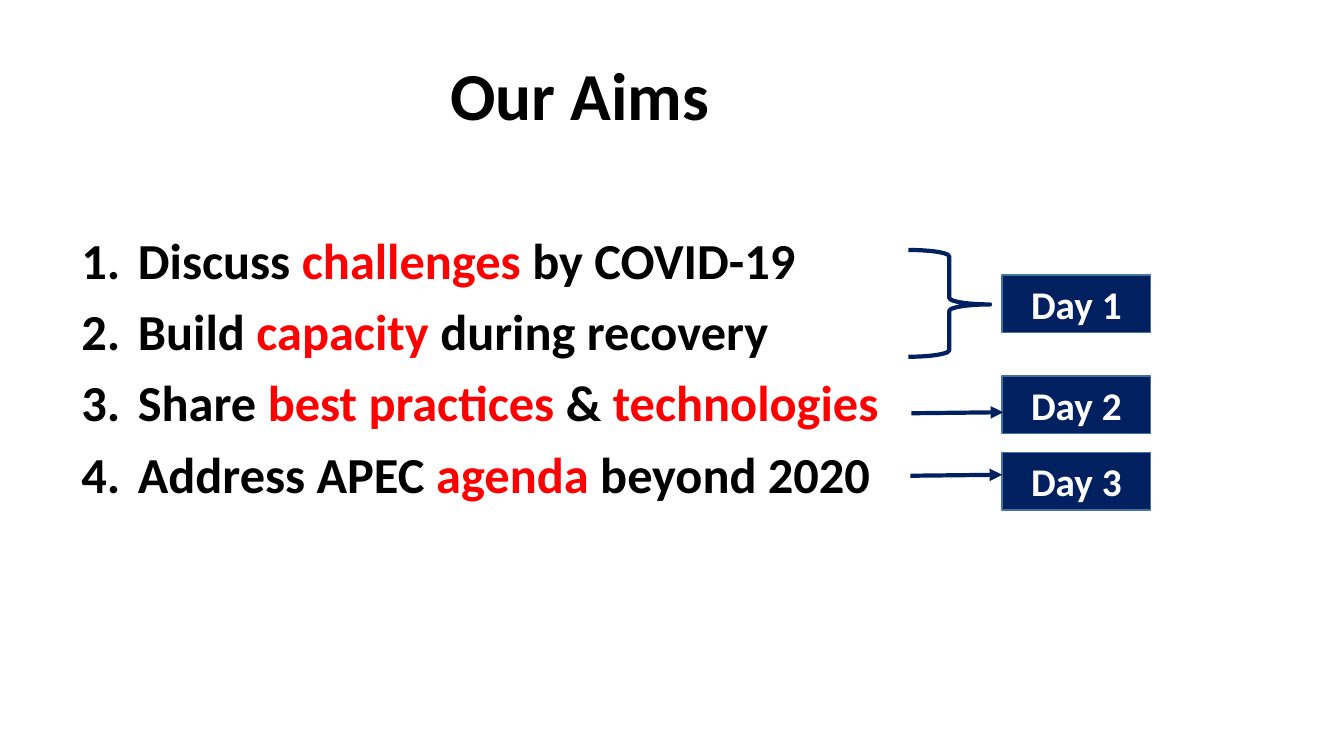
from lxml.etree import SubElement
from pptx import Presentation
from pptx.dml.color import RGBColor
from pptx.enum.shapes import MSO_CONNECTOR, MSO_SHAPE
from pptx.enum.text import MSO_ANCHOR, PP_ALIGN
from pptx.oxml.ns import qn
from pptx.util import Inches, Pt

BLACK = RGBColor(0, 0, 0)
WHITE = RGBColor(255, 255, 255)
RED = RGBColor(255, 0, 0)
NAVY = RGBColor(0, 0x20, 0x60)
EDGE = RGBColor(0x43, 0x73, 0x9E)

AIMS = [
    [("Discuss ", BLACK), ("challenges", RED), (" by COVID-19", BLACK)],
    [("Build ", BLACK), ("capacity", RED), (" during recovery", BLACK)],
    [("Share ", BLACK), ("best practices", RED), (" & ", BLACK),
     ("technologies", RED)],
    [("Address APEC ", BLACK), ("agenda ", RED), ("beyond 2020", BLACK)],
]
DAYS = [("Day 1", 2.73), ("Day 2", 3.73), ("Day 3", 4.49)]
ARROWS = [(9.03, 4.72), (9.04, 4.1)]


def number(para, indent):
    """Give the paragraph an automatic number with a hanging indent."""
    props = para._p.get_or_add_pPr()
    props.set("marL", str(Inches(indent)))
    props.set("indent", str(-Inches(indent)))
    SubElement(props, qn("a:buFont"), typeface="+mj-lt")
    SubElement(props, qn("a:buAutoNum"), type="arabicPeriod")


def write(frame, paras, size, align=PP_ALIGN.LEFT, anchor=MSO_ANCHOR.TOP,
          font="Calibri", spacing=None, before=0, indent=0):
    """Fill a text frame; each paragraph is a list of (text, colour) runs."""
    frame.word_wrap = True
    frame.vertical_anchor = anchor
    for i, runs in enumerate(paras):
        para = frame.add_paragraph() if i else frame.paragraphs[0]
        para.alignment = align
        if spacing:
            para.line_spacing = spacing
        if i and before:
            para.space_before = Pt(before)
        if indent:
            number(para, indent)
        for text, color in runs:
            run = para.add_run()
            run.text = text
            run.font.name = font
            run.font.size = Pt(size)
            run.font.bold = True
            run.font.color.rgb = color


class Board:
    def __init__(self, slide):
        self.shapes = slide.shapes
        self.ink = NAVY
        self.width = Pt(3)

    def text(self, x, y, w, h, paras, **style):
        box = self.shapes.add_textbox(Inches(x), Inches(y), Inches(w), Inches(h))
        write(box.text_frame, paras, **style)

    def label(self, x, y, w, h, text):
        box = self.shapes.add_shape(MSO_SHAPE.RECTANGLE, Inches(x), Inches(y),
                                    Inches(w), Inches(h))
        box.shadow.inherit = False
        box.fill.solid()
        box.fill.fore_color.rgb = self.ink
        box.line.color.rgb = EDGE
        box.line.width = Pt(1)
        write(box.text_frame, [[(text, WHITE)]], size=28,
              align=PP_ALIGN.CENTER, anchor=MSO_ANCHOR.MIDDLE)

    def brace(self, x, y, w, h):
        mark = self.shapes.add_shape(MSO_SHAPE.RIGHT_BRACE, Inches(x), Inches(y),
                                     Inches(w), Inches(h))
        mark.shadow.inherit = False
        mark.adjustments[0] = 0.08
        mark.adjustments[1] = 0.51
        mark.fill.background()
        mark.line.color.rgb = self.ink
        mark.line.width = self.width

    def arrow(self, x, y, dx, dy):
        line = self.shapes.add_connector(
            MSO_CONNECTOR.STRAIGHT, Inches(x), Inches(y),
            Inches(x + dx), Inches(y + dy))
        line.line.color.rgb = self.ink
        line.line.width = self.width
        SubElement(line.line._get_or_add_ln(), qn("a:tailEnd"), type="triangle")
        SubElement(line._element.spPr, qn("a:effectLst"))


def main():
    deck = Presentation()
    deck.slide_width = Inches(13.33)
    deck.slide_height = Inches(7.5)
    board = Board(deck.slides.add_slide(deck.slide_layouts[6]))
    board.text(0, 0.25, 11.5, 1.45, [[("Our Aims", BLACK)]], size=48,
               align=PP_ALIGN.CENTER, anchor=MSO_ANCHOR.MIDDLE, spacing=0.9)
    board.text(0.71, 2.29, 8.2, 2.8, AIMS, size=36, spacing=0.9, before=12,
               indent=0.56)
    board.brace(9.01, 2.48, 0.81, 1.06)
    for day, top in DAYS:
        board.label(9.94, top, 1.47, 0.57, day)
    for x, y in ARROWS:
        board.arrow(x, y, 0.91, -0.01)
    deck.save("out.pptx")


if __name__ == "__main__":
    main()
